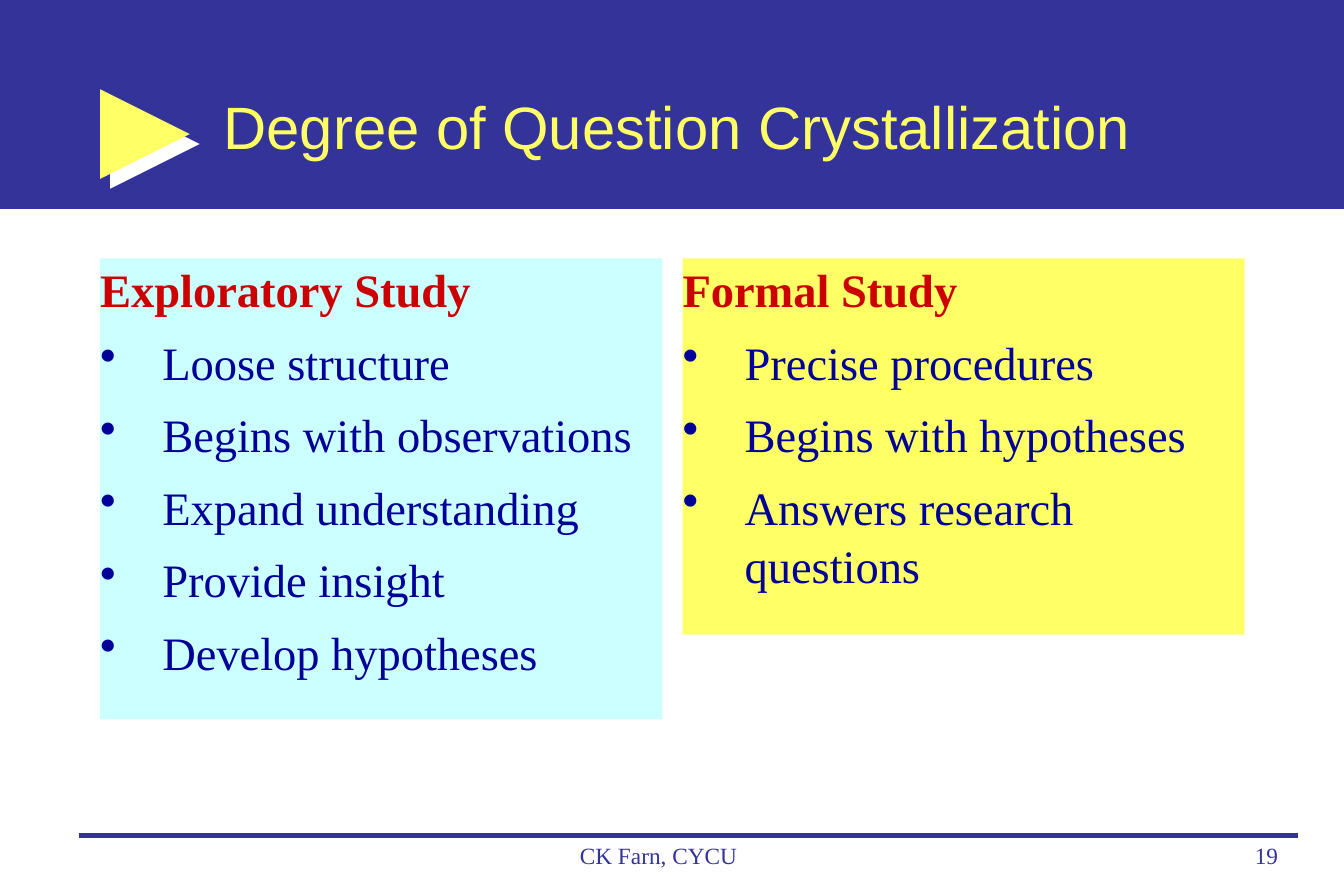
import pptx
import pptx.util
import pptx.dml.color
import pptx.enum.shapes
import pptx.enum.text
import pptx.oxml
import pptx.oxml.ns

Cm, Pt = pptx.util.Cm, pptx.util.Pt
RGB = pptx.dml.color.RGBColor
SHAPE = pptx.enum.shapes.MSO_SHAPE
ALIGN = pptx.enum.text.PP_ALIGN
ANCHOR = pptx.enum.text.MSO_ANCHOR

INDIGO = RGB(0x33, 0x33, 0x99)
YELLOW = RGB(0xFF, 0xFF, 0x66)
CYAN = RGB(0xCC, 0xFF, 0xFF)
RED = RGB(0xCC, 0x00, 0x00)
NAVY = RGB(0x00, 0x00, 0x99)

WIDTH, HEIGHT = Cm(28.55), Cm(19.02)
MARGIN = Cm(2.13)
HANG = Cm(1.32)
NS = pptx.oxml.ns.nsdecls("a")


def add_xml(parent, text):
    parent.append(pptx.oxml.parse_xml(text))


def add_block(slide, kind, left, top, width, height, fill):
    block = slide.shapes.add_shape(kind, left, top, width, height)
    block.shadow.inherit = False
    block.fill.solid()
    block.fill.fore_color.rgb = fill
    block.line.fill.background()
    return block


def set_font(para, name, size, color, bold=False):
    font = para.font
    font.name, font.size, font.bold = name, Pt(size), bold
    font.color.rgb = color


def clear_insets(frame):
    frame.word_wrap = True
    frame.margin_left = frame.margin_right = 0
    frame.margin_top = frame.margin_bottom = 0


def add_header(slide, left, top, width, height, title):
    add_block(slide, SHAPE.RECTANGLE, left, top, width, height, INDIGO)

    # Arrow that is all head, with a hard white shadow
    side = Cm(1.9)
    arrow = add_block(slide, SHAPE.RIGHT_ARROW, left + MARGIN, top + Cm(1.9),
                      side, side, YELLOW)
    arrow.adjustments[0], arrow.adjustments[1] = 0.38, 1.0
    effects = arrow._element.spPr.find(pptx.oxml.ns.qn("a:effectLst"))
    add_xml(effects, f'<a:outerShdw {NS} dist="107950" dir="2700000" '
            'algn="ctr" rotWithShape="0"><a:srgbClr val="FFFFFF"/>'
            '</a:outerShdw>')

    # Title
    box = slide.shapes.add_textbox(left + Cm(4.75), top + Cm(1.07),
                                   Cm(21.64), Cm(3.18))
    frame = box.text_frame
    clear_insets(frame)
    frame.vertical_anchor = ANCHOR.MIDDLE
    frame.text = title
    set_font(frame.paragraphs[0], "Arial", 36, YELLOW)


def add_panel(slide, left, top, width, height, fill, heading, items):
    panel = add_block(slide, SHAPE.RECTANGLE, left, top, width, height, fill)
    frame = panel.text_frame
    clear_insets(frame)
    frame.vertical_anchor = ANCHOR.TOP
    frame.text = "\n".join([heading] + items)
    for row, para in enumerate(frame.paragraphs):
        para.alignment = ALIGN.LEFT
        para.line_spacing = 1.05
        para.space_before = Pt(8.4)
        set_font(para, "Times New Roman", 28, NAVY if row else RED, row == 0)
        if row:
            props = para._p.get_or_add_pPr()
            props.set("marL", str(HANG))
            props.set("indent", str(-HANG))
            bullet = pptx.oxml.parse_xml(f'<a:buChar {NS} char="•"/>')
            props.find(pptx.oxml.ns.qn("a:defRPr")).addprevious(bullet)


def add_footer(slide, left, top, width, height, credit, number):
    rule = slide.shapes.add_connector(pptx.enum.shapes.MSO_CONNECTOR.STRAIGHT,
                                      left, top, left + width, top)
    rule.line.color.rgb = INDIGO
    rule.line.width = Pt(3)
    add_xml(rule._element.spPr, f"<a:effectLst {NS}/>")

    notes = [(Cm(7.8), Cm(9.04), credit, ALIGN.CENTER),
             (Cm(19.79), Cm(5.94), number, ALIGN.RIGHT)]
    for shift, span, text, align in notes:
        box = slide.shapes.add_textbox(left + shift, top, span, height)
        box.text_frame.word_wrap = True
        box.text_frame.text = text
        para = box.text_frame.paragraphs[0]
        para.alignment = align
        set_font(para, "Times New Roman", 14, INDIGO)


def main():
    deck = pptx.Presentation()
    deck.slide_width, deck.slide_height = WIDTH, HEIGHT
    slide = deck.slides.add_slide(deck.slide_layouts[6])

    add_header(slide, 0, 0, WIDTH, Cm(4.44),
               "Degree of Question Crystallization")

    # Two panels side by side
    panels = [
        (Cm(9.8), CYAN, "Exploratory Study",
         ["Loose structure", "Begins with observations",
          "Expand understanding", "Provide insight", "Develop hypotheses"]),
        (Cm(8), YELLOW, "Formal Study",
         ["Precise procedures", "Begins with hypotheses",
          "Answers research questions"]),
    ]
    wide, gap = Cm(11.94), Cm(0.43)
    for col, (tall, fill, heading, items) in enumerate(panels):
        add_panel(slide, MARGIN + col * (wide + gap), Cm(5.49), wide, tall,
                  fill, heading, items)

    add_footer(slide, Cm(1.67), Cm(17.75), Cm(25.91), Cm(1.27),
               "CK Farn, CYCU", "19")
    deck.save("out.pptx")


if __name__ == "__main__":
    main()
